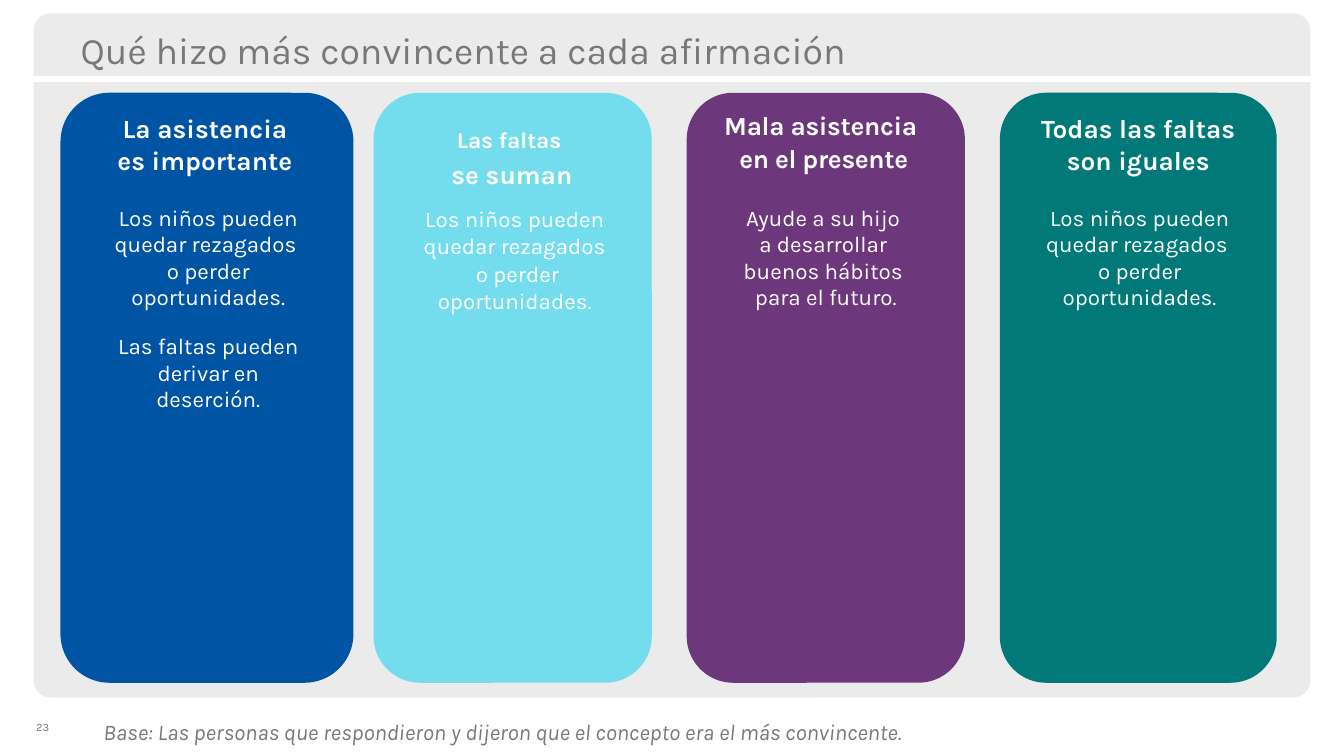
import pptx
import pptx.dml.color
import pptx.enum.shapes
import pptx.enum.text
import pptx.oxml
import pptx.util
from pptx.util import Inches, Pt

RGBColor = pptx.dml.color.RGBColor
WHITE = RGBColor(0xFF, 0xFF, 0xFF)
PANEL = RGBColor(0xEB, 0xEB, 0xEB)
GRAY = RGBColor(0x77, 0x78, 0x7A)
BLUE = RGBColor(0x00, 0x54, 0xA4)
CYAN = RGBColor(0x73, 0xDD, 0xEE)
PURPLE = RGBColor(0x6D, 0x37, 0x7C)
TEAL = RGBColor(0x00, 0x79, 0x78)

FONT = "Karla"
CENTER = pptx.enum.text.PP_ALIGN.CENTER
LEFT = pptx.enum.text.PP_ALIGN.LEFT

CARD_TOP, CARD_HEIGHT, CARD_STEP = 0.69, 4.39, 2.33
BODY_OFFSET = 0.83
TEXT_INDENT = 0.01

FALL_BEHIND = "Los niños pueden quedar rezagados \no perder oportunidades."

# Each card: colour, width, heading box (offset x, offset y, width), heading runs
# (text, size, raw run attributes), body box (offset x, width, height),
# body spacing, body paragraphs
CARDS = [
    (BLUE, 2.18, (0, 0.14, 2.15), [("La asistencia\nes importante", 14, {})],
     (0.32, 1.55, 1.54), Pt(14.2),
     [FALL_BEHIND, "Las faltas pueden derivar en deserción."]),
    (CYAN, 2.07, (0, 0.12, 2.06),
     [("Las faltas \n", 21, {"baseline": "2000"}), ("se suman", 14, {})],
     (0.27, 1.55, 0.82), 1.02,
     ["Los niños pueden quedar rezagados\n o perder oportunidades."]),
    (PURPLE, 2.07, (0, 0.12, 2.04),
     [("Mala asistencia \nen el presente", 14, {"spc": "-20"})],
     (0.21, 1.64, 0.79), Pt(14.2),
     ["Ayude a su hijo \na desarrollar \nbuenos hábitos \npara el futuro."]),
    (TEAL, 2.06, (0.27, 0.14, 1.52), [("Todas las faltas son iguales", 14, {})],
     (0.26, 1.55, 0.79), Pt(14.2), [FALL_BEHIND]),
]


def add_rounded(page, left, top, width, height, color, radius):
    shape = page.shapes.add_shape(
        pptx.enum.shapes.MSO_SHAPE.ROUNDED_RECTANGLE,
        Inches(left), Inches(top), Inches(width), Inches(height))
    shape.adjustments[0] = radius
    shape.shadow.inherit = False
    shape.fill.solid()
    shape.fill.fore_color.rgb = color
    shape.line.fill.background()


def add_text_box(page, left, top, width, height, indent=0):
    box = page.shapes.add_textbox(
        Inches(left), Inches(top), Inches(width), Inches(height))
    frame = box.text_frame
    frame.word_wrap = True
    frame.margin_left = Inches(indent)
    frame.margin_top = frame.margin_right = frame.margin_bottom = 0
    return frame


def add_span(para, text, size, color, bold=False, italic=False, attributes=None):
    """Add text in runs, with a line break at each newline."""
    for index, line in enumerate(text.split("\n")):
        if index:
            para.add_line_break()
        if not line:
            continue
        span = para.add_run()
        span.text = line
        span.font.name = FONT
        span.font.size = Pt(size)
        span.font.color.rgb = color
        span.font.bold = bold
        span.font.italic = italic
        for name, value in (attributes or {}).items():
            span._r.get_or_add_rPr().set(name, value)


def add_line_of_text(page, left, top, width, height, text, size,
                     spacing=None, italic=False, indent=TEXT_INDENT):
    frame = add_text_box(page, left, top, width, height, indent)
    para = frame.paragraphs[0]
    para.alignment = LEFT
    para.line_spacing = spacing
    add_span(para, text, size, GRAY, italic=italic)
    return frame


def add_panel(page, left, top, width, height):
    add_rounded(page, left, top, width, height, PANEL, 0.025)
    # White rule under the title band
    rule = page.shapes.add_connector(
        pptx.enum.shapes.MSO_CONNECTOR.STRAIGHT,
        Inches(0), Inches(top + 0.49), Inches(10), Inches(top + 0.49))
    rule.line.color.rgb = WHITE
    rule.line.width = Pt(3.25)
    rule._element.spPr.append(pptx.oxml.parse_xml(
        '<a:effectLst xmlns:a='
        '"http://schemas.openxmlformats.org/drawingml/2006/main"/>'))
    # Title
    frame = add_line_of_text(page, left + 0.17, top + 0.05, width - 0.34, 0.39,
                             "Qué hizo más convincente a cada afirmación", 20,
                             indent=0.18)
    frame.margin_top = Inches(0.05)


def add_card(page, left, top, height, card):
    color, width, heading_box, heading, body_box, spacing, body = card
    add_rounded(page, left, top, width, height, color, 0.167)

    # Heading
    heading_x, heading_y, heading_width = heading_box
    frame = add_text_box(page, left + heading_x, top + heading_y, heading_width, 0.49)
    para = frame.paragraphs[0]
    para.alignment = CENTER
    para.line_spacing = 1.03
    for text, size, attributes in heading:
        add_span(para, text, size, WHITE, bold=True, attributes=attributes)

    # Body
    body_x, body_width, body_height = body_box
    frame = add_text_box(page, left + body_x, top + BODY_OFFSET,
                         body_width, body_height, TEXT_INDENT)
    for index, text in enumerate(body):
        para = frame.add_paragraph() if index else frame.paragraphs[0]
        para.alignment = CENTER
        para.line_spacing = spacing
        if index:
            para.space_before = Pt(12)
        add_span(para, text, 12, WHITE)


def add_footer(page, left, top):
    add_line_of_text(page, left, top, 0.13, 0.12, "23", 6, Pt(7.8))
    add_line_of_text(
        page, left + 0.5, top + 0.01, 7.91, 0.18,
        "Base: Las personas que respondieron y dijeron que el concepto era "
        "el más convincente.", 12, Pt(13.2), italic=True)


def main():
    deck = pptx.Presentation()
    # Widescreen, 16:9
    deck.slide_width = Inches(10)
    deck.slide_height = Inches(10 * 9 / 16)
    page = deck.slides.add_slide(deck.slide_layouts[6])
    add_panel(page, 0.25, 0.1, 9.5, 5.09)
    for index, card in enumerate(CARDS):
        add_card(page, 0.45 + index * CARD_STEP, CARD_TOP, CARD_HEIGHT, card)
    add_footer(page, 0.26, 5.35)
    deck.save("out.pptx")


if __name__ == "__main__":
    main()
